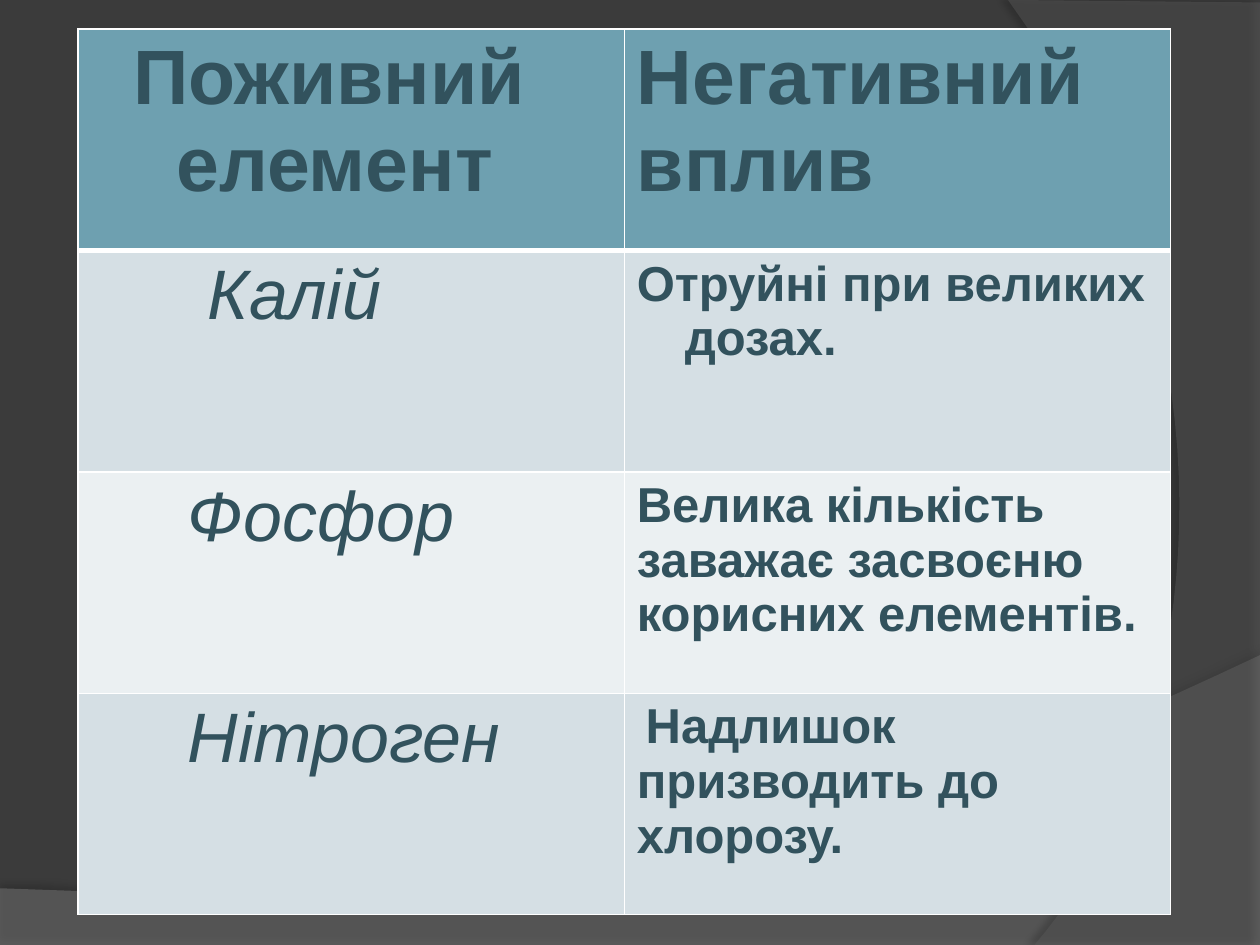
from dataclasses import dataclass

from lxml import etree
from pptx import Presentation
from pptx.dml.color import RGBColor
from pptx.oxml import ns
from pptx.util import Inches, Pt


@dataclass(frozen=True)
class Theme:
    background: str = "3B3B3B"
    lower_wave: str = "7F7F7F"
    right_wave: str = "5E5E5E"
    shadow: str = "000000"
    ink: str = "32525D"
    header: str = "6EA0B0"
    bands: tuple = ("D5DFE4", "EBF0F2")
    border: str = "FFFFFF"
    font: str = "Arial"
    header_size: int = 44
    element_size: int = 40
    effect_size: int = 28


THEME = Theme()

# Each line of a cell: text, left margin, first-line indent (inches)
HEADINGS = (
    [("Поживний", 0.34, 0), ("елемент", 0.68, 0)],
    [("Негативний", 0, 0), ("вплив", 0, 0)],
)
NUTRIENTS = (
    (("Калій", 0.93, 0), ("Отруйні при великих дозах.", 0.38, -0.38)),
    (("Фосфор", 0.77, 0),
     ("Велика кількість заважає засвоєню корисних елементів.", 0, 0)),
    (("Нітроген", 0.77, 0), ("Надлишок призводить до хлорозу.", 0, 0.07)),
)


def add_xml(parent, tag, **attributes):
    child = etree.SubElement(parent, ns.qn(tag))
    for key, value in attributes.items():
        child.set(key, str(value))
    return child


def curve(start, control_1, control_2, end, steps=40):
    """Points along a cubic Bezier curve, without its start."""
    points = []
    for step in range(1, steps + 1):
        t = step / steps
        weights = ((1 - t) ** 3, 3 * t * (1 - t) ** 2, 3 * t * t * (1 - t), t ** 3)
        points.append(tuple(
            sum(w * value for w, value in zip(weights, axis))
            for axis in zip(start, control_1, control_2, end)))
    return points


def add_wave(slide, points, color, opacity, shadow_opacity, distance, direction):
    """Translucent outline with a soft shadow; opacities are percentages."""
    corners = [(Inches(x), Inches(y)) for x, y in points]
    builder = slide.shapes.build_freeform(*corners[0], scale=1.0)
    builder.add_line_segments(corners[1:], close=True)
    wave = builder.convert_to_shape()
    wave.fill.solid()
    wave.fill.fore_color.rgb = RGBColor.from_string(color)
    wave.line.fill.background()
    fill_color = wave.fill._xPr.find(ns.qn("a:solidFill"))[0]
    add_xml(fill_color, "a:alpha", val=opacity * 1000)
    wave.shadow.inherit = False
    effects = wave._element.spPr.find(ns.qn("a:effectLst"))
    shadow = add_xml(effects, "a:outerShdw", blurRad=Pt(4), dist=Pt(distance),
                     dir=direction * 60000, algn="ctr", rotWithShape=0)
    shadow_color = add_xml(shadow, "a:srgbClr", val=THEME.shadow)
    add_xml(shadow_color, "a:alpha", val=shadow_opacity * 1000)


def add_backdrop(slide, width, height):
    slide.background.fill.solid()
    slide.background.fill.fore_color.rgb = RGBColor.from_string(THEME.background)
    lower = [(0, 7.05), (0, height), (width, height), (width, 5.2)]
    lower += curve(lower[-1], (5.59, 7.29), (3.91, 7.19), lower[0])
    add_wave(slide, lower, THEME.lower_wave, 45, 35, 3.5, 270)
    right = [(width, 0.02), (width, height), (8.21, height)]
    right += curve(right[-1], (9.35, 6.19), (10.18, 3), (8, 0))
    add_wave(slide, right, THEME.right_wave, 40, 45, 4, 180)


def write_line(paragraph, content, *, size, margin=0, indent=0, bold=False, italic=False):
    properties = paragraph._p.get_or_add_pPr()
    properties.set("marL", str(Inches(margin)))
    properties.set("indent", str(Inches(indent)))
    run = paragraph.add_run()
    run.text = content
    run.font.name = THEME.font
    run.font.size = Pt(size)
    run.font.bold = bold
    run.font.italic = italic
    run.font.color.rgb = RGBColor.from_string(THEME.ink)


def fill_cell(cell, lines, fill, top=1, bottom=1, **style):
    """Write the lines and give the cell its fill and borders (points)."""
    for number, (content, margin, indent) in enumerate(lines):
        frame = cell.text_frame
        paragraph = frame.add_paragraph() if number else frame.paragraphs[0]
        write_line(paragraph, content, margin=margin, indent=indent, **style)
    cell.fill.solid()
    cell.fill.fore_color.rgb = RGBColor.from_string(fill)
    properties = cell._tc.get_or_add_tcPr()
    sides = {"a:lnL": 1, "a:lnR": 1, "a:lnT": top, "a:lnB": bottom}
    for position, (side, weight) in enumerate(sides.items()):
        border = add_xml(properties, side, w=Pt(weight))
        add_xml(add_xml(border, "a:solidFill"), "a:srgbClr", val=THEME.border)
        properties.insert(position, border)


def add_nutrient_table(slide, left, top, width, height):
    table = slide.shapes.add_table(
        len(NUTRIENTS) + 1, len(HEADINGS),
        Inches(left), Inches(top), Inches(width), Inches(height)).table
    for column, heading in enumerate(HEADINGS):
        fill_cell(table.cell(0, column), heading, THEME.header, bottom=3,
                  size=THEME.header_size, bold=True)
    for row, (element, effect) in enumerate(NUTRIENTS, start=1):
        band = THEME.bands[(row - 1) % 2]
        rule = 3 if row == 1 else 1
        fill_cell(table.cell(row, 0), [element], band, top=rule,
                  size=THEME.element_size, italic=True)
        fill_cell(table.cell(row, 1), [effect], band, top=rule,
                  size=THEME.effect_size, bold=True)


def main():
    width, height = 10, 7.5
    presentation = Presentation()
    presentation.slide_width = Inches(width)
    presentation.slide_height = Inches(height)
    slide = presentation.slides.add_slide(presentation.slide_layouts[6])
    add_backdrop(slide, width, height)
    add_nutrient_table(slide, 0.62, 0.23, 8.67, 7.03)
    presentation.save("out.pptx")


if __name__ == "__main__":
    main()
